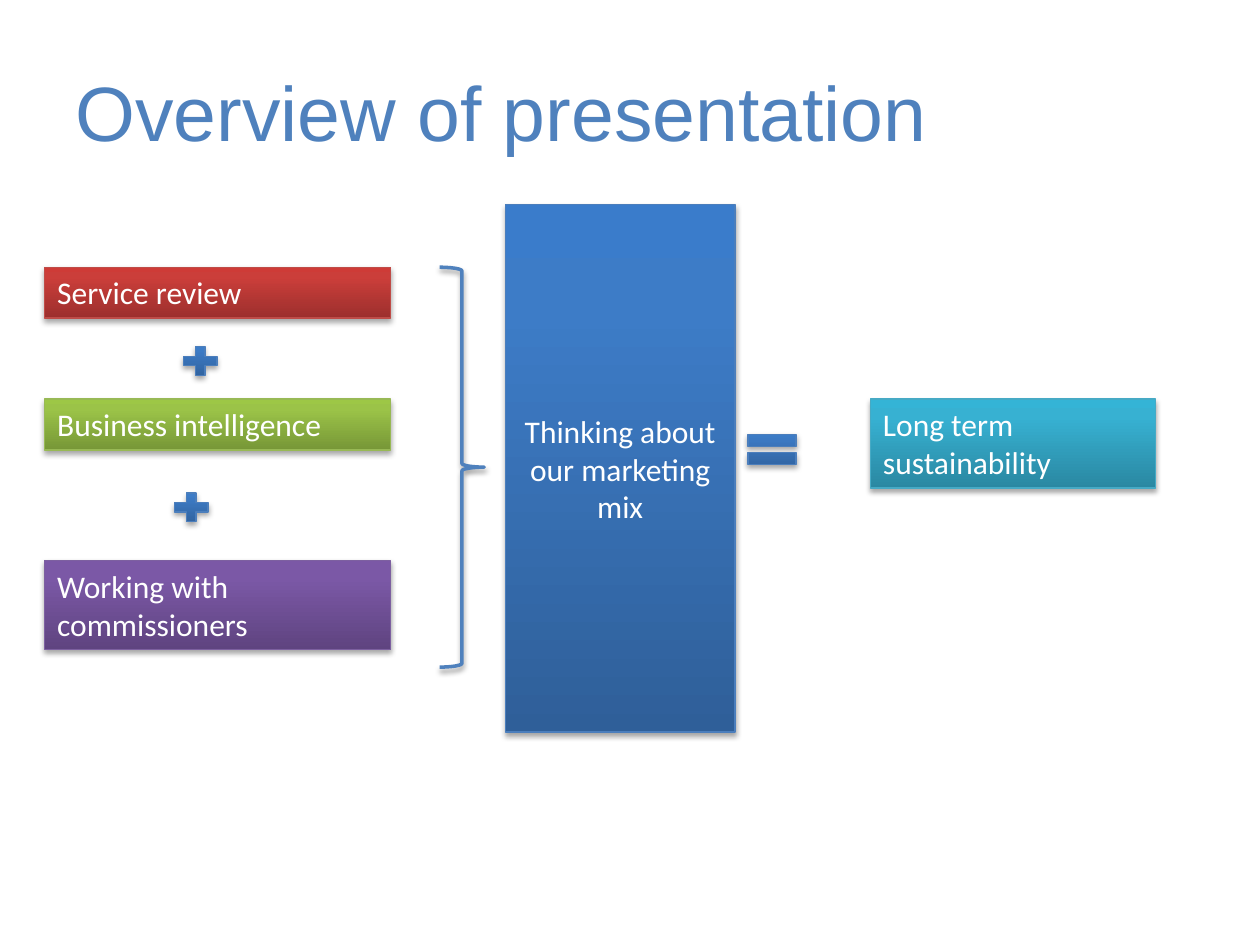
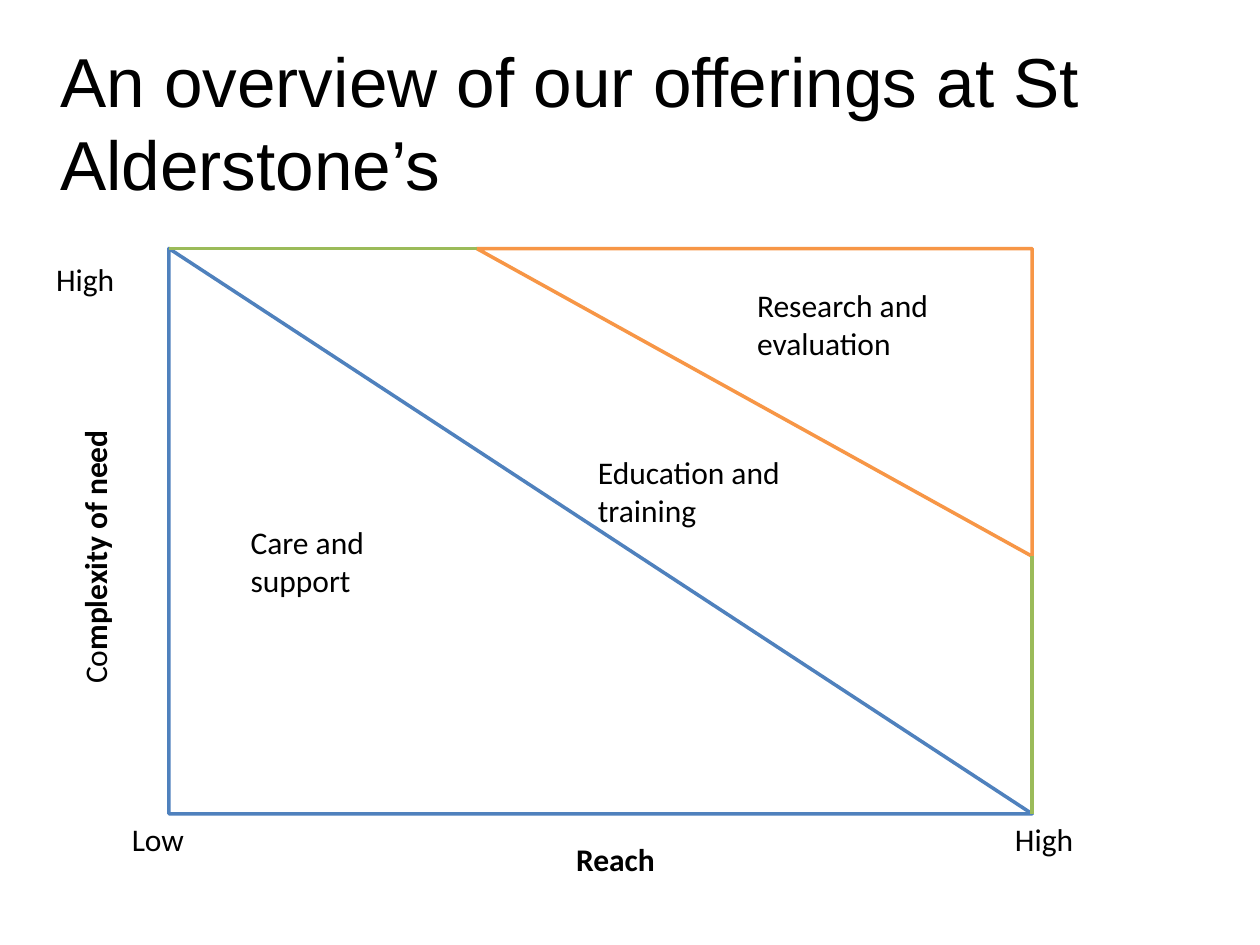
from lxml import etree
from pptx import Presentation
from pptx.dml.color import RGBColor
from pptx.enum.shapes import MSO_CONNECTOR, MSO_SHAPE
from pptx.enum.text import MSO_ANCHOR, MSO_AUTO_SIZE, PP_ALIGN
from pptx.oxml import parse_xml
from pptx.oxml.ns import qn
from pptx.util import Pt

RECT = MSO_SHAPE.RECTANGLE
PLUS = MSO_SHAPE.MATH_PLUS
EQUAL = MSO_SHAPE.MATH_EQUAL
BRACE = MSO_SHAPE.RIGHT_BRACE
WEDGE = MSO_SHAPE.RIGHT_TRIANGLE
LINE = MSO_CONNECTOR.STRAIGHT
TOP, MIDDLE = MSO_ANCHOR.TOP, MSO_ANCHOR.MIDDLE
GROW, FIXED = MSO_AUTO_SIZE.SHAPE_TO_FIT_TEXT, MSO_AUTO_SIZE.NONE
LEFT, CENTER = PP_ALIGN.LEFT, PP_ALIGN.CENTER
NS = "http://schemas.openxmlformats.org/drawingml/2006/main"

HUES = {"white": "FFFFFF", "black": "000000", "blue": "4F81BD",
        "green": "9BBB59", "orange": "F79646"}
# Gradient from bottom to top, then the outline
TONES = {
    "red": ("9C2F2D", "CB3E3A", "CE3B37", "BF4C48"),
    "lime": ("779737", "9BC348", "9DC746", "98B955"),
    "purple": ("5F4480", "7B58A6", "7C57A8", "7D60A0"),
    "blue": ("2F5F99", "3D7CC7", "3A7CCB", "4B7EBC"),
    "teal": ("2A88A2", "37B1D2", "34B4D6", "46AAC5"),
}


def form(slide, kind, box, edge, width, tone=None, shade=0):
    """Add an outlined shape, with an optional gradient and shadow."""
    shape = slide.shapes.add_shape(kind, *[Pt(v) for v in box])
    shape.line.color.rgb = RGBColor.from_string(edge)
    shape.line.width = Pt(width)
    shape.shadow.inherit = False
    props = shape.element.spPr
    if tone:
        stops = "".join(
            f'<a:gs pos="{pos}"><a:srgbClr val="{hue}"/></a:gs>'
            for pos, hue in zip((0, 80000, 100000), tone))
        props.insert(2, parse_xml(
            f'<a:gradFill xmlns:a="{NS}" rotWithShape="1"><a:gsLst>{stops}</a:gsLst>'
            '<a:lin ang="16200000" scaled="0"/></a:gradFill>'))
    if shade:
        props.find(qn("a:effectLst")).append(parse_xml(
            f'<a:outerShdw xmlns:a="{NS}" blurRad="{Pt(3.1)}" dist="{Pt(1.8)}" '
            'dir="5400000" rotWithShape="0"><a:srgbClr val="000000">'
            f'<a:alpha val="{shade * 1000}"/></a:srgbClr></a:outerShdw>'))
    return shape


def write(shape, runs, hue, size=18, font="Calibri", align=LEFT, anchor=TOP, fit=GROW):
    """Fill a shape with one paragraph of (text, bold) runs."""
    frame = shape.text_frame
    frame.word_wrap = True
    frame.auto_size = fit
    frame.vertical_anchor = anchor
    para = frame.paragraphs[0]
    para.alignment = align
    for text, bold in runs:
        run = para.add_run()
        run.text = text
        run.font.name = font
        run.font.size = Pt(size)
        run.font.bold = bold
        run.font.color.rgb = RGBColor.from_string(HUES[hue])


deck = Presentation()
deck.slide_width, deck.slide_height = Pt(720), Pt(540)
blank = deck.slide_layouts[6]

# Slides and titles
pages = []
for text, left, top, size, hue in (
        ("Overview of presentation", 36, 18, 44, "blue"),
        ("An overview of our offerings at St Alderstone’s", 27.4, 24.5, 39.6, "black")):
    page = deck.slides.add_slide(blank)
    title = page.shapes.add_textbox(Pt(left), Pt(top), Pt(648), Pt(90))
    write(title, [(text, False)], hue, size, "Arial", anchor=MIDDLE, fit=FIXED)
    pages.append(page)
flow, chart = pages

# Flow: labelled boxes
for text, tone, box in (
        ("Service review", "red", (25.6, 152.7, 197.6, 29.1)),
        ("Business intelligence", "lime", (25.6, 228, 197.6, 29.1)),
        ("Working with commissioners", "purple", (25.6, 320.4, 197.6, 50.9)),
        ("Long term sustainability", "teal", (497.5, 228, 162.7, 50.9))):
    *fade, edge = TONES[tone]
    item = form(flow, RECT, box, edge, 0.75, fade, 35)
    write(item, [(text, False)], "white")

# Flow: signs and central block
*fade, edge = TONES["blue"]
for kind, box in ((PLUS, (101.6, 195, 25.8, 22.4)),
                  (PLUS, (96.5, 278.8, 25.8, 22.4)),
                  (EQUAL, (422.5, 242.6, 37.4, 28.8))):
    form(flow, kind, box, edge, 0.75, fade, 35)
mix = form(flow, RECT, (288.7, 117, 131.4, 301.3), edge, 0.75, fade, 35)
write(mix, [("Thinking about our marketing mix", False)], "white",
      align=CENTER, anchor=MIDDLE, fit=FIXED)
brace = form(flow, BRACE, (251.3, 152.7, 25.4, 228.5), HUES["blue"], 2, shade=38)
brace.fill.background()

# Chart: two triangles inside one frame
x0, y0, x1, y1 = 96.5, 142, 589.8, 465.1
cut_x, cut_y = 272.4, 317.9
for box, hue, turn in (((x0, y0, x1 - x0, y1 - y0), "blue", 0),
                       ((cut_x, y0, x1 - cut_x, cut_y - y0), "orange", 180)):
    wedge = form(chart, WEDGE, box, HUES[hue], 2)
    wedge.fill.solid()
    wedge.fill.fore_color.rgb = RGBColor.from_string(HUES["white"])
    wedge.rotation = turn

# Chart: outer edges of the middle band
for ends in ((x0, y0, cut_x, y0), (x1, cut_y, x1, y1)):
    rule = chart.shapes.add_connector(LINE, *[Pt(v) for v in ends])
    rule.line.color.rgb = RGBColor.from_string(HUES["green"])
    rule.line.width = Pt(2.25)
    etree.SubElement(rule.element.spPr, qn("a:effectLst"))

# Chart: areas, axis ends and axis names
for runs, box, align, turn in (
        ([("Care and support", False)], (136.1, 295.2, 124.6, 50.9), LEFT, "horz"),
        ([("Research and evaluation", False)], (425.5, 159.8, 147.6, 50.9), LEFT, "horz"),
        ([("Education and training", False)], (334.6, 255.4, 130.3, 50.9), LEFT, "horz"),
        ([("Low", False)], (68.2, y1, 56.9, 29.1), LEFT, "horz"),
        ([("High", False)], (572.9, y1, 62.6, 29.1), LEFT, "horz"),
        ([("High", False)], (25, 145.2, 62.6, 29.1), LEFT, "horz"),
        ([("Reach", True)], (198.7, 476.6, 306, 29.1), CENTER, "horz"),
        ([("Co", False), ("mplexity of need", True)],
         (39.6, 221.8, 36.3, 193), CENTER, "vert270")):
    label = chart.shapes.add_textbox(*[Pt(v) for v in box])
    write(label, runs, "black", align=align)
    label.text_frame._txBody.bodyPr.set("vert", turn)

deck.save("out.pptx")
